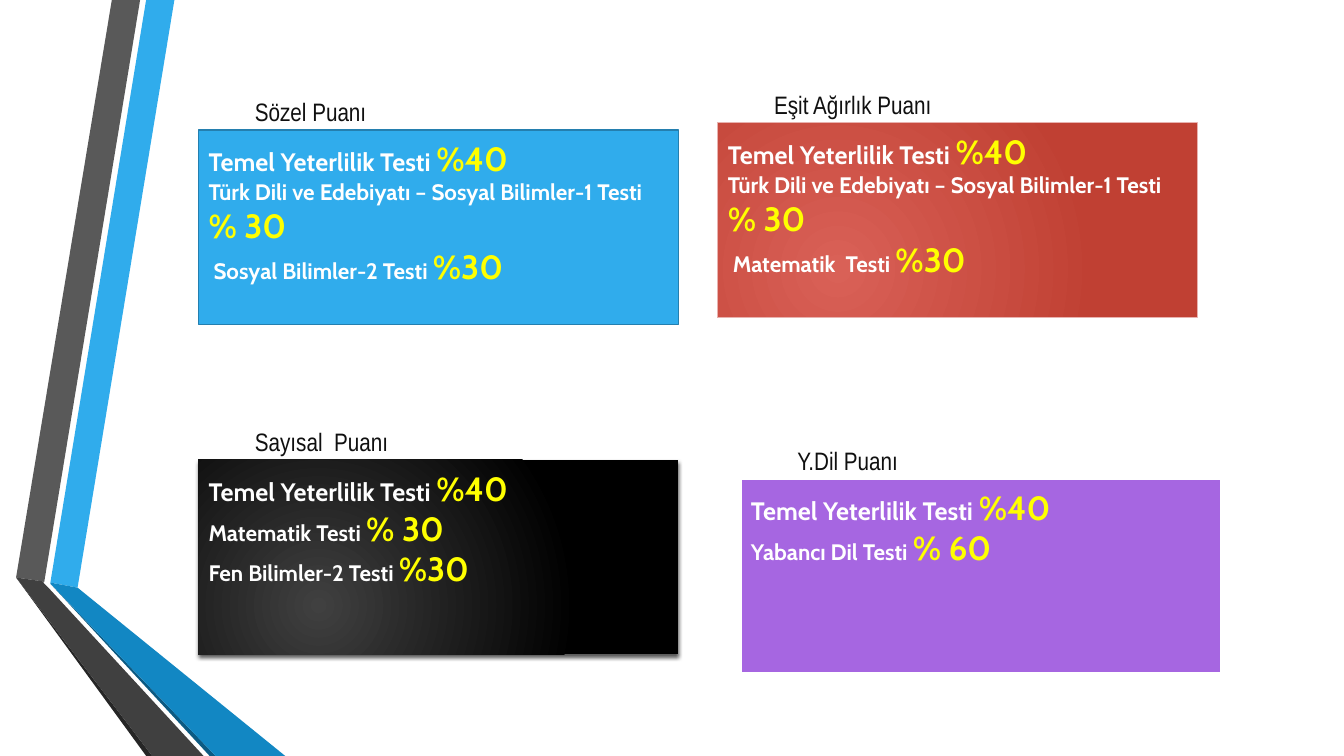
import pptx
import pptx.dml.color
import pptx.enum.dml
import pptx.enum.shapes
import pptx.enum.text
import pptx.oxml
import pptx.oxml.ns
import pptx.util
from pptx.util import Inches

COLORS = {
    "blue": "30ACEC", "blue edge": "247FAF", "deep blue": "1287C3", "navy": "0C5A82",
    "gray": "595959", "dark gray": "404040", "charcoal": "262626", "black": "000000",
    "light red": "D96157", "red": "C04033", "pink edge": "E8B2AF", "purple": "A666E1",
    "white": "FFFFFF", "yellow": "FFFF00", "ink": "101010",
}
NS = pptx.oxml.ns.nsdecls("a")
RADIAL = f'<a:path {NS} path="circle"><a:fillToRect l="50000" t="100000" r="100000" b="50000"/></a:path>'
SHADOW = (f'<a:effectLst {NS}><a:outerShdw blurRad="38100" dist="25400" dir="5400000" rotWithShape="0">'
          f'<a:srgbClr val="{COLORS["black"]}"><a:alpha val="64000"/></a:srgbClr></a:outerShdw></a:effectLst>')


def rgb(name):
    return pptx.dml.color.RGBColor.from_string(COLORS[name])


def add_text(left, top, width, height, paragraphs, font_format):
    """Add a wrapped text box; each paragraph is a list of (text, size, color)."""
    box = slide.shapes.add_textbox(Inches(left), Inches(top), Inches(width), Inches(height))
    frame = box.text_frame
    frame.word_wrap = True
    frame.auto_size = pptx.enum.text.MSO_AUTO_SIZE.SHAPE_TO_FIT_TEXT
    for index, runs in enumerate(paragraphs):
        paragraph = frame.add_paragraph() if index else frame.paragraphs[0]
        for text, size, color in runs:
            run = paragraph.add_run()
            run.text = text
            run.font.size = pptx.util.Pt(size)
            run.font.color.rgb = rgb(color)
            for attribute, value in font_format.items():
                setattr(run.font, attribute, value)


deck = pptx.Presentation()
deck.slide_width, deck.slide_height = Inches(13.33), Inches(7.5)
slide = deck.slides.add_slide(deck.slide_layouts[6])

# Folded ribbons on the left edge
ribbons = [
    ("blue", [(0.5, 5.78), (0.77, 5.83), (1.73, 0), (1.45, 0)]),
    ("gray", [(1.39, 0), (1.11, 0), (0.16, 5.73), (0.44, 5.77)]),
    ("charcoal", [(0.16, 5.73), (1.45, 7.5), (1.51, 7.5)]),
    ("navy", [(0.5, 5.79), (2.08, 7.5), (2.14, 7.5)]),
    ("deep blue", [(0.5, 5.79), (2.14, 7.5), (2.83, 7.5), (0.77, 5.83), (0.5, 5.78)]),
    ("dark gray", [(2.02, 7.5), (0.48, 5.83), (0.43, 5.78), (0.44, 5.77), (0.16, 5.73), (1.51, 7.5)]),
]
for color, corners in ribbons:
    points = [(Inches(x), Inches(y)) for x, y in corners]
    builder = slide.shapes.build_freeform(*points[0])
    builder.add_line_segments(points[1:], close=True)
    ribbon = builder.convert_to_shape()
    ribbon.shadow.inherit = False
    ribbon.fill.solid()
    ribbon.fill.fore_color.rgb = rgb(color)
    ribbon.line.fill.background()

# Score panels: title, left, top, fill colors, edge, shadow, text height, tests with weights
literature = ("Türk Dili ve Edebiyatı – Sosyal Bilimler-1 Testi ", "% 30")
panels = [
    ("Eşit Ağırlık Puanı", 7.12, 1.22, ["light red", "red"], ("pink edge", 0.75), False, 1.58,
     [literature, (" Matematik  Testi ", "%30")]),
    ("Sözel Puanı", 1.97, 1.29, ["blue"], ("blue edge", 1.25), False, 1.58,
     [literature, (" Sosyal Bilimler-2 Testi ", "%30")]),
    ("Sayısal  Puanı", 1.97, 4.56, ["dark gray", "black"], None, True, 1.31,
     [("Matematik Testi ", "% 30"), ("Fen Bilimler-2 Testi ", "%30")]),
    ("Y.Dil Puanı", 7.35, 4.75, ["purple"], ("white", 1.75), False, 1.09,
     [("Yabancı Dil Testi ", "% 60")]),
]
PANEL_WIDTH, PANEL_HEIGHT = 4.76, 1.93
for title, left, top, fills, edge, shaded, text_height, tests in panels:
    panel = slide.shapes.add_shape(
        pptx.enum.shapes.MSO_SHAPE.RECTANGLE,
        Inches(left), Inches(top), Inches(PANEL_WIDTH), Inches(PANEL_HEIGHT))
    panel.shadow.inherit = False
    if len(fills) == 2:
        panel.fill.gradient()
        for stop, color, position in zip(panel.fill.gradient_stops, fills, (0, 1)):
            stop.color.rgb = rgb(color)
            stop.position = position
        linear = panel.element.spPr.find(".//" + pptx.oxml.ns.qn("a:lin"))
        linear.getparent().replace(linear, pptx.oxml.parse_xml(RADIAL))
    else:
        panel.fill.solid()
        panel.fill.fore_color.rgb = rgb(fills[0])
    if edge:
        panel.line.color.rgb = rgb(edge[0])
        panel.line.width = pptx.util.Pt(edge[1])
    else:
        panel.line.fill.background()
    if shaded:
        effects = panel.element.spPr.find(pptx.oxml.ns.qn("a:effectLst"))
        effects.getparent().replace(effects, pptx.oxml.parse_xml(SHADOW))

    weights = [[("Temel Yeterlilik Testi ", 18, "white"), ("%40", 24, "yellow"), (" ", 12, "yellow")]]
    weights += [[(test, 16, "white"), (weight, 24, "yellow")] for test, weight in tests]
    add_text(left, top + 0.03, PANEL_WIDTH, text_height, weights, {"name": "Cabin", "bold": True})
    add_text(left + 0.46, top - 0.38, 4.5, 0.4, [[(title, 18, "ink")]], {"name": "Arial Narrow"})

deck.save("out.pptx")
